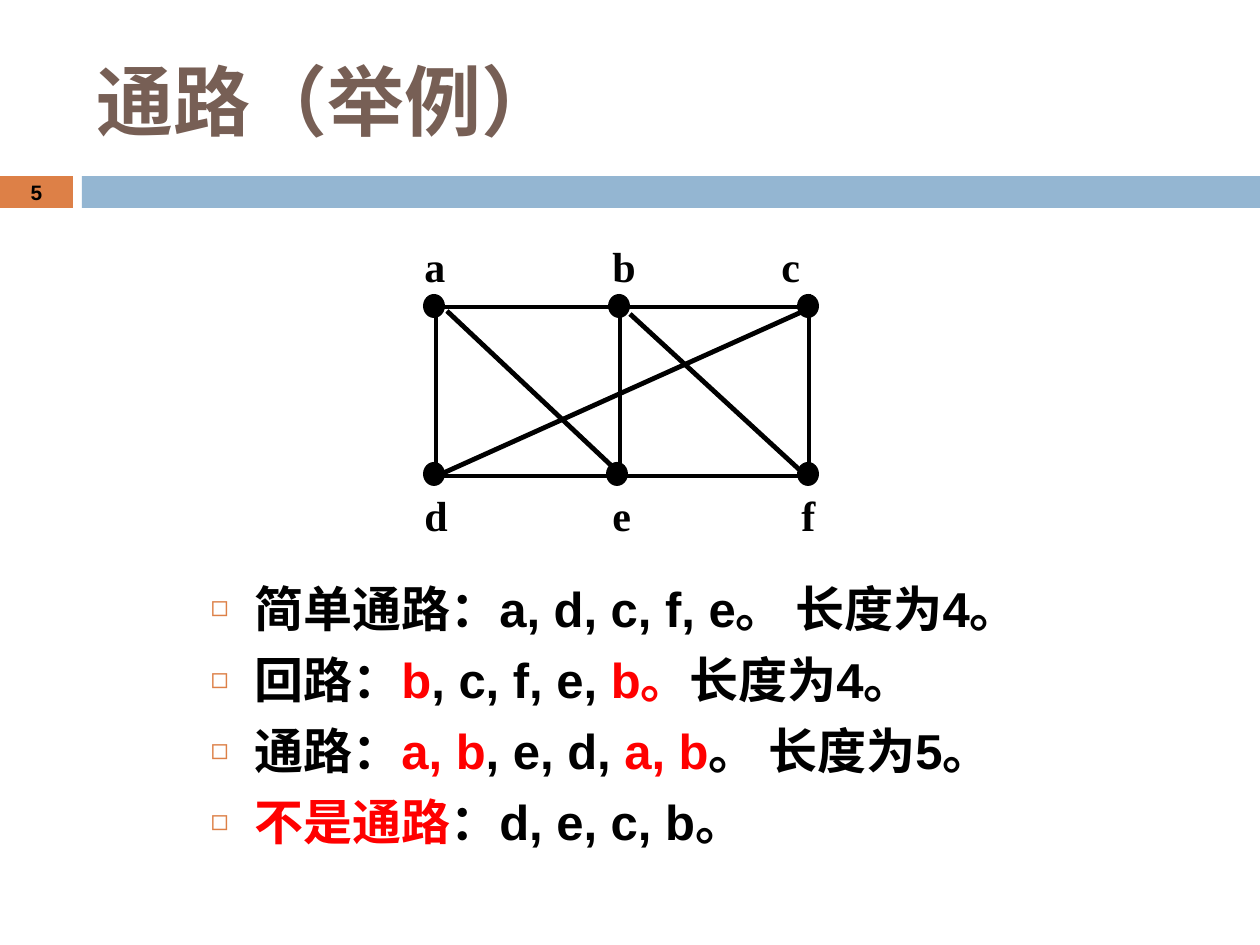
from lxml import etree
from pptx import Presentation
from pptx import util as u
from pptx.dml.color import RGBColor
from pptx.enum import shapes, text
from pptx.oxml.ns import qn

BLACK = RGBColor(0x00, 0x00, 0x00)
RED = RGBColor(0xFF, 0x00, 0x00)
ORANGE = RGBColor(0xDD, 0x80, 0x47)
BLUE = RGBColor(0x94, 0xB6, 0xD2)
BROWN = RGBColor(0x77, 0x5F, 0x55)

TITLE = "通路（举例）"
PAGE = "5"
ITEMS = [
    [("简单通路：a, d, c, f, e。 长度为4。", BLACK)],
    [("回路：", BLACK), ("b", RED), (", c, f, e,", BLACK), (" b。", RED),
     ("长度为4。", BLACK)],
    [("通路：", BLACK), ("a, b", RED), (", e, d, ", BLACK), ("a, b", RED),
     ("。 长度为5。", BLACK)],
    [("不是通路", RED), ("：d, e, c, b。", BLACK)],
]
BARS = [(0, 73, ORANGE), (82, 1178, BLUE)]  # left, width, colour
BAR_TOP, BAR_HEIGHT = 176, 32

NODE_W, NODE_H = 22, 24
LABEL_W, LABEL_H = 49, 63
# name: node centre x, centre y, label left, label top
NODES = {
    "a": (434, 306, 412, 234),
    "b": (619, 306, 600, 234),
    "c": (808, 306, 769, 234),
    "d": (434, 474, 412, 483),
    "e": (617, 474, 600, 483),
    "f": (808, 474, 789, 483),
}
EDGES = {
    "ab": (440, 307, 620, 307),
    "bc": (624, 307, 805, 307),
    "de": (440, 476, 620, 476),
    "ef": (624, 476, 805, 476),
    "ad": (436, 304, 436, 483),
    "be": (620, 304, 620, 483),
    "cf": (809, 294, 809, 473),
    "ae": (447, 311, 616, 470),
    "bf": (630, 314, 803, 473),
    "cd": (806, 310, 430, 479),
}


def px(*lengths):
    return [u.Inches(n / 126) for n in lengths]


def place(sp, *box):
    sp.left, sp.top, sp.width, sp.height = px(*box)


def style(r, size, font, color):
    r.font.size, r.font.name, r.font.bold = u.Pt(size), font, True
    r.font.color.rgb = color


def add_filled(parent, kind, box, color):
    sp = parent.add_shape(kind, *px(*box))
    sp.shadow.inherit = False
    sp.fill.solid()
    sp.fill.fore_color.rgb = color
    sp.line.fill.background()
    return sp


def add_label(parent, label, box, size, font):
    tf = parent.add_textbox(*px(*box)).text_frame
    tf.word_wrap = True
    tf.text = label
    style(tf.paragraphs[0].runs[0], size, font, BLACK)
    return tf


def add_edge(parent, ends):
    line = parent.add_connector(shapes.MSO_CONNECTOR.STRAIGHT, *px(*ends))
    line.line.color.rgb = BLACK
    line.line.width = u.Pt(2.75)
    etree.SubElement(line._element.spPr, qn("a:effectLst"))


def set_bullet(p):
    pPr = p._p.get_or_add_pPr()
    pPr.set("marL", str(u.Inches(0.35)))
    pPr.set("indent", str(-u.Inches(0.35)))
    color = etree.SubElement(pPr, qn("a:buClr"))
    etree.SubElement(color, qn("a:srgbClr"), val=str(ORANGE))
    etree.SubElement(pPr, qn("a:buSzPct"), val="60000")
    etree.SubElement(pPr, qn("a:buChar"), char="◻")


prs = Presentation()
prs.slide_width, prs.slide_height = px(1260, 945)
slide = prs.slides.add_slide(prs.slide_layouts[1])
title, body = slide.placeholders

place(title, 84, 32, 1124, 136)
tf = title.text_frame
tf.text = TITLE
tf.vertical_anchor = text.MSO_ANCHOR.MIDDLE
tf.auto_size = text.MSO_AUTO_SIZE.NONE
tf.paragraphs[0].alignment = text.PP_ALIGN.LEFT
style(tf.paragraphs[0].runs[0], 44, "Calibri", BROWN)

for left, width, color in BARS:
    add_filled(slide.shapes, shapes.MSO_SHAPE.RECTANGLE,
               (left, BAR_TOP, width, BAR_HEIGHT), color)
tf = add_label(slide.shapes, PAGE, (0, 175, 73, 34), 11.9, "Arial")
tf.vertical_anchor = text.MSO_ANCHOR.MIDDLE
tf.paragraphs[0].alignment = text.PP_ALIGN.CENTER

place(body, 198, 572, 903, 318)
tf = body.text_frame
tf.auto_size = text.MSO_AUTO_SIZE.NONE
for i, item in enumerate(ITEMS):
    p = tf.add_paragraph() if i else tf.paragraphs[0]
    p.space_before = u.Pt(7)
    set_bullet(p)
    for words, color in item:
        r = p.add_run()
        r.text = words
        style(r, 28, "Arial", color)

graph = slide.shapes.add_group_shape().shapes
for ends in EDGES.values():
    add_edge(graph, ends)
for name, (x, y, left, top) in NODES.items():
    add_filled(graph, shapes.MSO_SHAPE.OVAL,
               (x - NODE_W / 2, y - NODE_H / 2, NODE_W, NODE_H), BLACK)
    add_label(graph, name, (left, top, LABEL_W, LABEL_H), 24, "Times New Roman")

prs.save("out.pptx")
